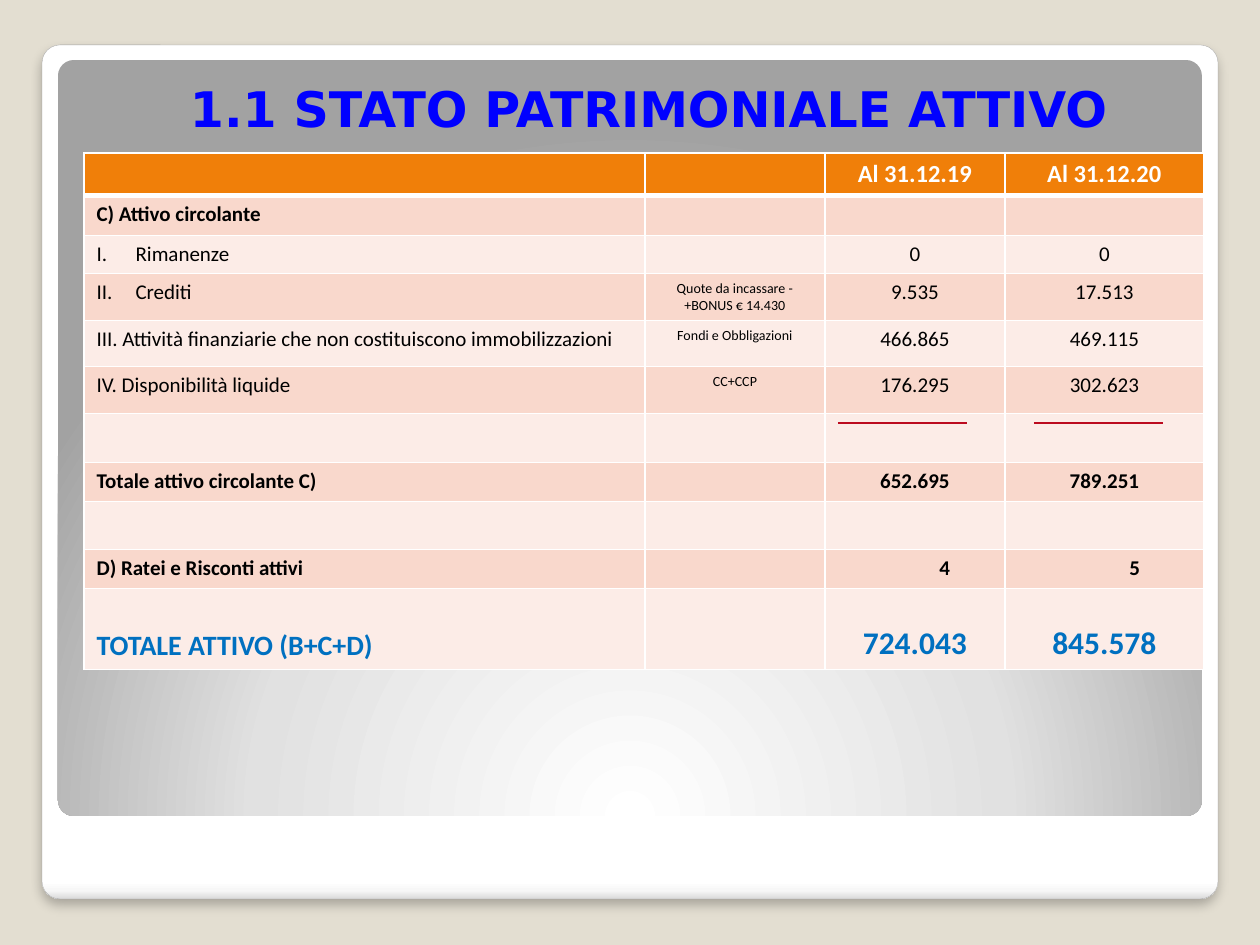
from lxml import etree
from pptx import Presentation, util as u
from pptx.dml.color import RGBColor
from pptx.enum import shapes, text
from pptx.oxml import parse_xml
from pptx.oxml.ns import qn

SCALE = 914400 / 126
INK = {
    "page": "E3DED1", "edge": "A4A4A4", "white": "FFFFFF", "black": "000000",
    "head": "F07F09", "dark": "F9D8CC", "light": "FCECE7",
    "title": "0000FF", "total": "0070C0", "rule": "BC0B1F",
}
NS = 'xmlns:a="http://schemas.openxmlformats.org/drawingml/2006/main"'
LINEAR = '<a:lin ang="5400000" scaled="0"/>'
CIRCLE = ('<a:path path="circle"><a:fillToRect l="50000" t="175000" '
          'r="50000" b="-75000"/></a:path>')
LEFT, MID, RIGHT = text.PP_ALIGN.LEFT, text.PP_ALIGN.CENTER, text.PP_ALIGN.RIGHT

COLS = [561, 180, 180, 199]
NUMBER = 70  # width of a printed amount
# height, kind of row, cell texts
ROWS = [
    (42, "head", ["", "", "Al 31.12.19", "Al 31.12.20"]),
    (40, "bold", ["C) Attivo circolante", "", "", ""]),
    (38, "item", ["Rimanenze", "", "0", "0"]),
    (47, "item", ["Crediti", "Quote da incassare -+BONUS € 14.430", "9.535", "17.513"]),
    (46, "item", ["III. Attività finanziarie che non costituiscono immobilizzazioni",
                  "Fondi e Obbligazioni", "466.865", "469.115"]),
    (47, "item", ["IV. Disponibilità liquide", "CC+CCP", "176.295", "302.623"]),
    (49, "item", ["", "", "", ""]),
    (39, "bold", ["Totale attivo circolante C)", "", "652.695", "789.251"]),
    (48, "item", ["", "", "", ""]),
    (39, "accrual", ["D) Ratei e Risconti attivi", "", "4", "5"]),
    (81, "total", ["TOTALE ATTIVO (B+C+D)", "", "724.043", "845.578"]),
]
NUMBERED = {"Rimanenze": 1, "Crediti": 2}


def px(n):
    return u.Emu(round(n * SCALE))


def rgb(name):
    return RGBColor.from_string(INK[name])


def write(frame, words, size=12, font="Calibri", ink="black", bold=False, align=LEFT):
    para = frame.paragraphs[0]
    para.alignment = align
    if not words:
        etree.SubElement(para._p, qn("a:endParaRPr"), sz=str(size * 100))
        return para
    run = para.add_run()
    run.text = words
    run.font.size, run.font.name, run.font.bold = u.Pt(size), font, bold
    run.font.color.rgb = rgb(ink)
    return para


def number(para, start):
    """Give the paragraph a Roman numeral with a hanging indent."""
    props = para._p.get_or_add_pPr()
    props.set("marL", str(px(39)))
    props.set("indent", str(-px(39)))
    etree.SubElement(props, qn("a:buAutoNum"), type="romanUcPeriod", startAt=str(start))


def border(cell, top, bottom):
    props = cell._tc.get_or_add_tcPr()
    for side, width in (("L", 1), ("R", 1), ("T", top), ("B", bottom)):
        line = etree.SubElement(props, qn("a:ln" + side), w=str(u.Pt(width)))
        fill = etree.SubElement(line, qn("a:solidFill"))
        etree.SubElement(fill, qn("a:srgbClr"), val=INK["white"])


class Deck:
    def __init__(self):
        self.prs = Presentation()
        self.prs.slide_width, self.prs.slide_height = px(1260), px(945)
        self.slide = self.prs.slides.add_slide(self.prs.slide_layouts[6])
        self.slide.background.fill.solid()
        self.slide.background.fill.fore_color.rgb = rgb("page")

    def panel(self, x, y, w, h, stops, way, raised=False):
        """Draw a rounded panel with a gradient, raised by a line and shadow."""
        shape = self.slide.shapes.add_shape(
            shapes.MSO_SHAPE.ROUNDED_RECTANGLE, px(x), px(y), px(w), px(h))
        shape.adjustments[0] = 0.021
        shape.shadow.inherit = False
        shape.fill.background()
        marks = "".join(f'<a:gs pos="{pos * 1000}"><a:srgbClr val="{ink}"/></a:gs>'
                        for pos, ink in stops)
        props = shape._element.spPr
        props.replace(props.find(qn("a:noFill")), parse_xml(
            f'<a:gradFill {NS} rotWithShape="1"><a:gsLst>{marks}</a:gsLst>{way}</a:gradFill>'))
        if not raised:
            shape.line.fill.background()
            return
        shape.line.color.rgb = rgb("edge")
        shape.line.width = u.Pt(0.16)
        props.find(qn("a:effectLst")).append(parse_xml(
            f'<a:outerShdw {NS} blurRad="{u.Pt(6)}" dist="{u.Pt(4)}" dir="5400000" '
            'algn="tl" rotWithShape="0"><a:srgbClr val="000000">'
            '<a:alpha val="25000"/></a:srgbClr></a:outerShdw>'))

    def title(self, x, y, w, h, words):
        frame = self.slide.shapes.add_textbox(px(x), px(y), px(w), px(h)).text_frame
        frame.word_wrap = True
        frame.vertical_anchor = text.MSO_ANCHOR.BOTTOM
        write(frame, words, size=28, font="DejaVu Sans", ink="title", bold=True, align=MID)

    def table(self, x, y):
        high = sum(row[0] for row in ROWS)
        grid = self.slide.shapes.add_table(
            len(ROWS), len(COLS), px(x), px(y), px(sum(COLS)), px(high)).table
        grid.first_row = grid.horz_banding = False
        for col, width in zip(grid.columns, COLS):
            col.width = px(width)
        for r, (tall, kind, words) in enumerate(ROWS):
            grid.rows[r].height = px(tall)
            for c, word in enumerate(words):
                self.cell(grid.cell(r, c), r, c, kind, word)

    def cell(self, cell, r, c, kind, word):
        border(cell, 3 if r == 1 else 1, 3 if r == 0 else 1)
        cell.fill.solid()
        cell.fill.fore_color.rgb = rgb("head" if r == 0 else "dark" if r % 2 else "light")
        look = {"bold": kind != "item", "align": MID if c else LEFT}
        if kind == "head":
            look.update(size=14, ink="white")
        elif kind == "total":
            look.update(size=18 if c > 1 else 16, ink="total")
            cell.vertical_anchor = text.MSO_ANCHOR.BOTTOM
        elif c == 1:
            look.update(size=8)
        elif kind == "accrual" and c:
            look.update(align=RIGHT)
            cell.margin_right = px((COLS[c] - NUMBER) // 2)
        para = write(cell.text_frame, word, **look)
        if word in NUMBERED:
            number(para, NUMBERED[word])

    def rule(self, x, y, w):
        line = self.slide.shapes.add_connector(
            shapes.MSO_CONNECTOR.STRAIGHT, px(x), px(y), px(x + w), px(y))
        line.line.color.rgb = rgb("rule")
        line.line.width = u.Pt(0.75)
        etree.SubElement(line._element.spPr, qn("a:effectLst"))


def main():
    deck = Deck()
    deck.panel(42, 45, 1176, 854,
               [(0, "FFFFFF"), (98, "FFFFFF"), (99, "F7F7F7"), (100, "DADADA")],
               LINEAR, raised=True)
    deck.panel(58, 60, 1144, 756,
               [(0, "FFFFFF"), (55, "E1E1E1"), (100, "A2A2A2")], CIRCLE)
    deck.table(84, 153)
    deck.title(134, 76, 1029, 68, "1.1 STATO PATRIMONIALE ATTIVO")
    for x in (1034, 838):
        deck.rule(x, 423, 129)
    deck.prs.save("out.pptx")


if __name__ == "__main__":
    main()
